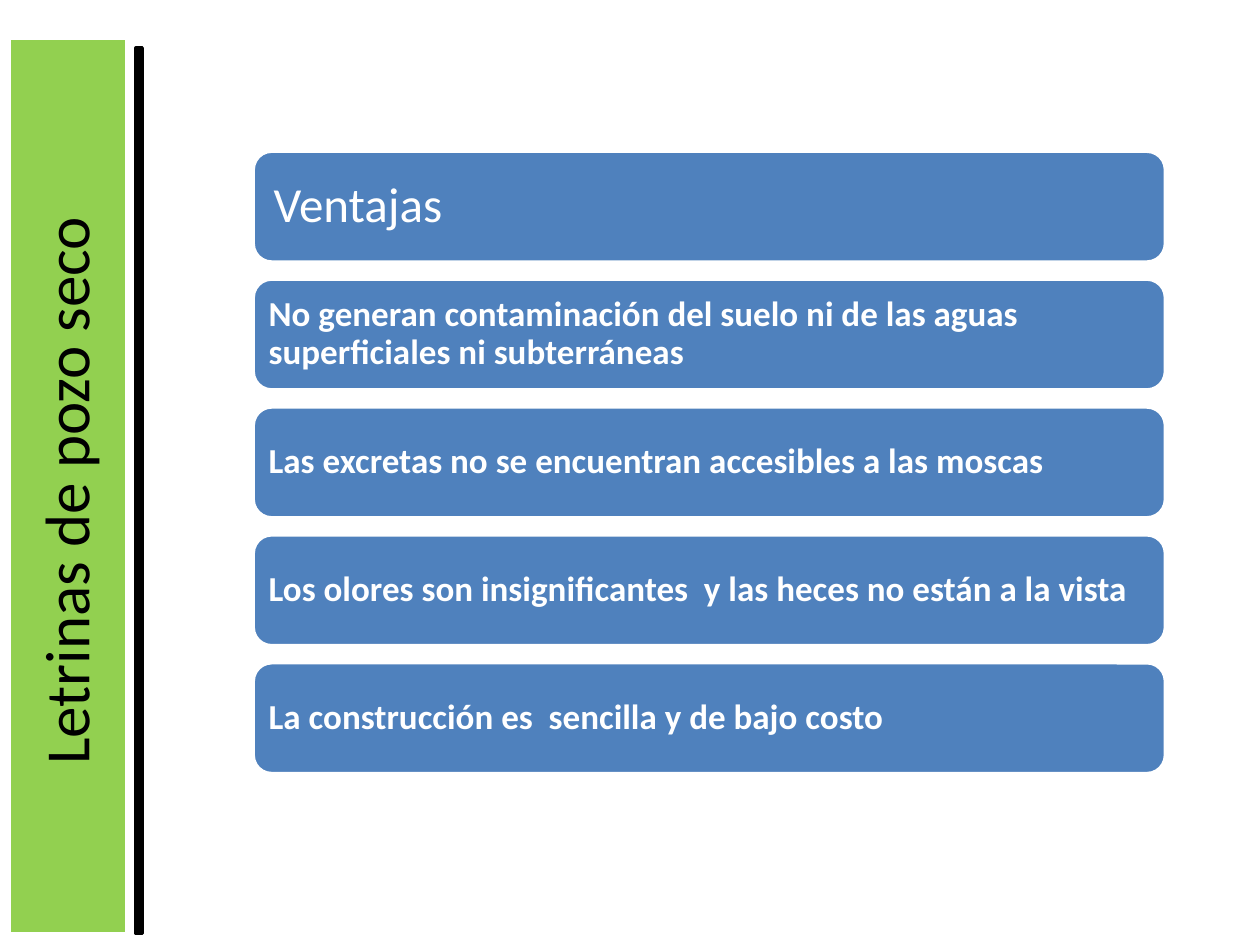
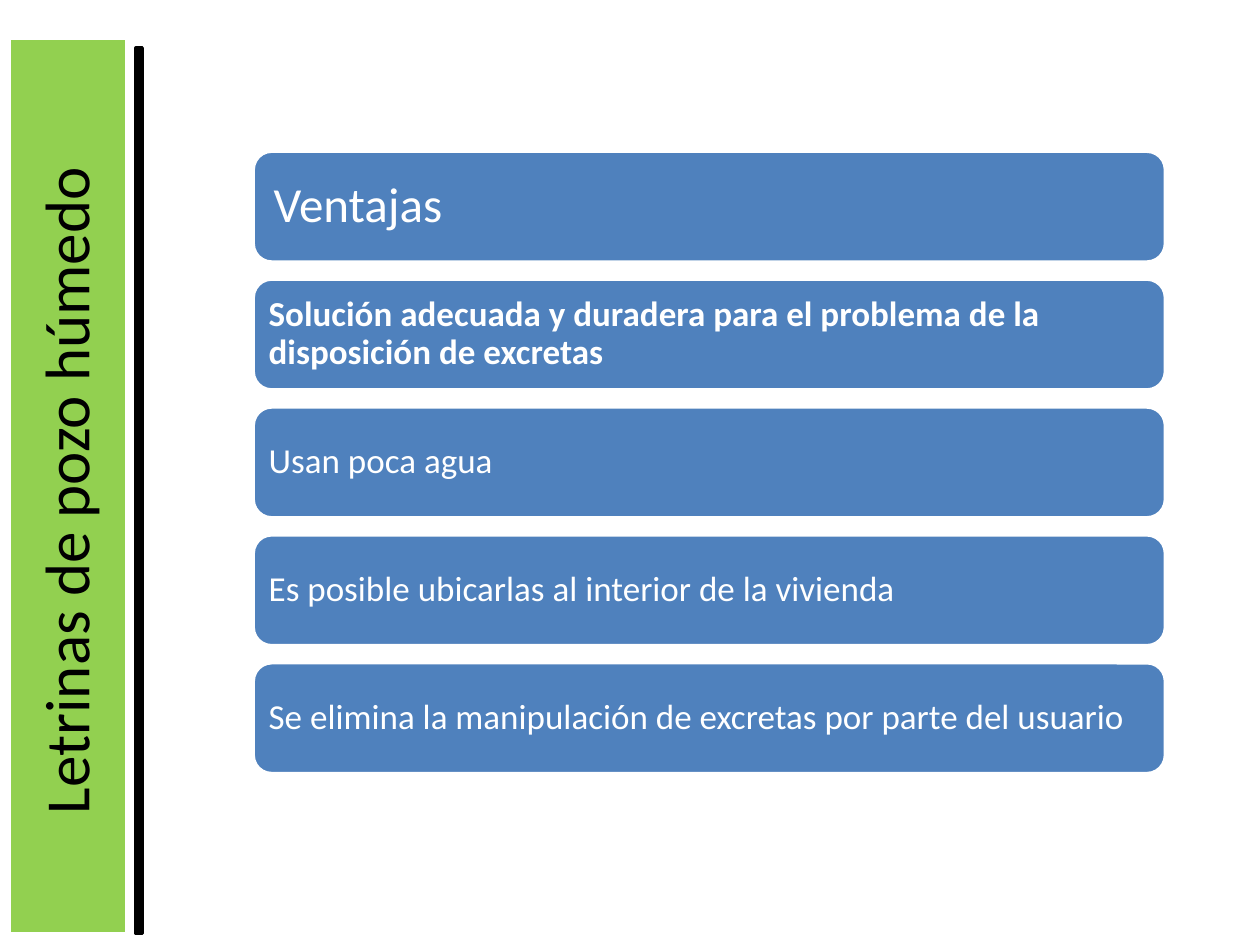
from pptx import Presentation
from pptx.dml.color import RGBColor
from pptx.enum.shapes import MSO_SHAPE
from pptx.enum.text import MSO_ANCHOR, MSO_AUTO_SIZE, PP_ALIGN
from pptx.util import Inches, Pt

RECT, ROUND = MSO_SHAPE.RECTANGLE, MSO_SHAPE.ROUNDED_RECTANGLE
TOP, MIDDLE = MSO_ANCHOR.TOP, MSO_ANCHOR.MIDDLE
LEFT, CENTER = PP_ALIGN.LEFT, PP_ALIGN.CENTER
NO_FIT = MSO_AUTO_SIZE.NONE

GREEN = RGBColor(0x92, 0xD0, 0x50)
BLUE = RGBColor(0x4F, 0x81, 0xBD)
BLACK = RGBColor(0, 0, 0)
WHITE = RGBColor(0xFF, 0xFF, 0xFF)
FONT = "Calibri"

HEAD = "Ventajas"
# Each slide: title, then its benefits as (text, bold)
SLIDES = [
    ("Letrinas de pozo seco", [
        ("No generan contaminación del suelo ni de las aguas "
         "superficiales ni subterráneas", True),
        ("Las excretas no se encuentran accesibles a las moscas", True),
        ("Los olores son insignificantes  y las heces no están a la vista", True),
        ("La construcción es  sencilla y de bajo costo", True),
    ]),
    ("Letrinas de pozo húmedo", [
        ("Solución adecuada y duradera para el problema de la "
         "disposición de excretas", True),
        ("Usan poca agua", False),
        ("Es posible ubicarlas al interior de la vivienda", False),
        ("Se elimina la manipulación de excretas por parte del usuario", False),
    ]),
]

TITLE_BOX = (-2.52, 3.24, 6.67, 1.31)
BAND = (0.07, 0.3, 0.94, 7.11)
RULE = (1.08, 0.38, 0.05, 7.03)
BAR_X, BAR_W, BAR_H = 2.01, 7.24, 0.88
FIRST_Y, LAST_Y = 1.2, 5.26


def add_box(slide, kind, box, fill, line):
    shape = slide.shapes.add_shape(kind, *map(Inches, box))
    shape.shadow.inherit = False
    shape.fill.solid()
    shape.fill.fore_color.rgb = fill
    shape.line.color.rgb = line
    shape.line.width = Pt(2)
    return shape


def write(frame, text, size, color, bold, align, anchor):
    frame.word_wrap = True
    frame.vertical_anchor = anchor
    para = frame.paragraphs[0]
    para.alignment = align
    run = para.add_run()
    run.text = text
    font = run.font
    font.name, font.size, font.bold = FONT, Pt(size), bold
    font.color.rgb = color
    return para


def add_side(slide, text):
    """Draw the green band and black rule, with the title turned upward on top."""
    add_box(slide, RECT, BAND, GREEN, WHITE)
    add_box(slide, RECT, RULE, BLACK, BLACK)
    title = slide.shapes.title
    title.left, title.top, title.width, title.height = map(Inches, TITLE_BOX)
    title.rotation = 270
    title.text_frame.auto_size = NO_FIT
    write(title.text_frame, text, 36, BLACK, False, CENTER, TOP)
    title.element.getparent().append(title.element)


def add_bar(slide, y, text, size, bold, inset):
    bar = add_box(slide, ROUND, (BAR_X, y, BAR_W, BAR_H), BLUE, WHITE)
    frame = bar.text_frame
    frame.margin_left = frame.margin_right = Inches(inset)
    frame.margin_top = frame.margin_bottom = Inches(inset)
    para = write(frame, text, size, WHITE, bold, LEFT, MIDDLE)
    para.line_spacing = 0.9


def add_bars(slide, items):
    step = (LAST_Y - FIRST_Y) / len(items)
    add_bar(slide, FIRST_Y, HEAD, 28, False, 0.12)
    for row, (text, bold) in enumerate(items, 1):
        add_bar(slide, FIRST_Y + row * step, text, 20, bold, 0.08)


def main():
    deck = Presentation()
    deck.slide_width, deck.slide_height = Inches(10), Inches(7.5)
    layout = deck.slide_layouts.get_by_name("Title Only")
    for title, items in SLIDES:
        slide = deck.slides.add_slide(layout)
        add_side(slide, title)
        add_bars(slide, items)
    deck.save("out.pptx")


if __name__ == "__main__":
    main()
